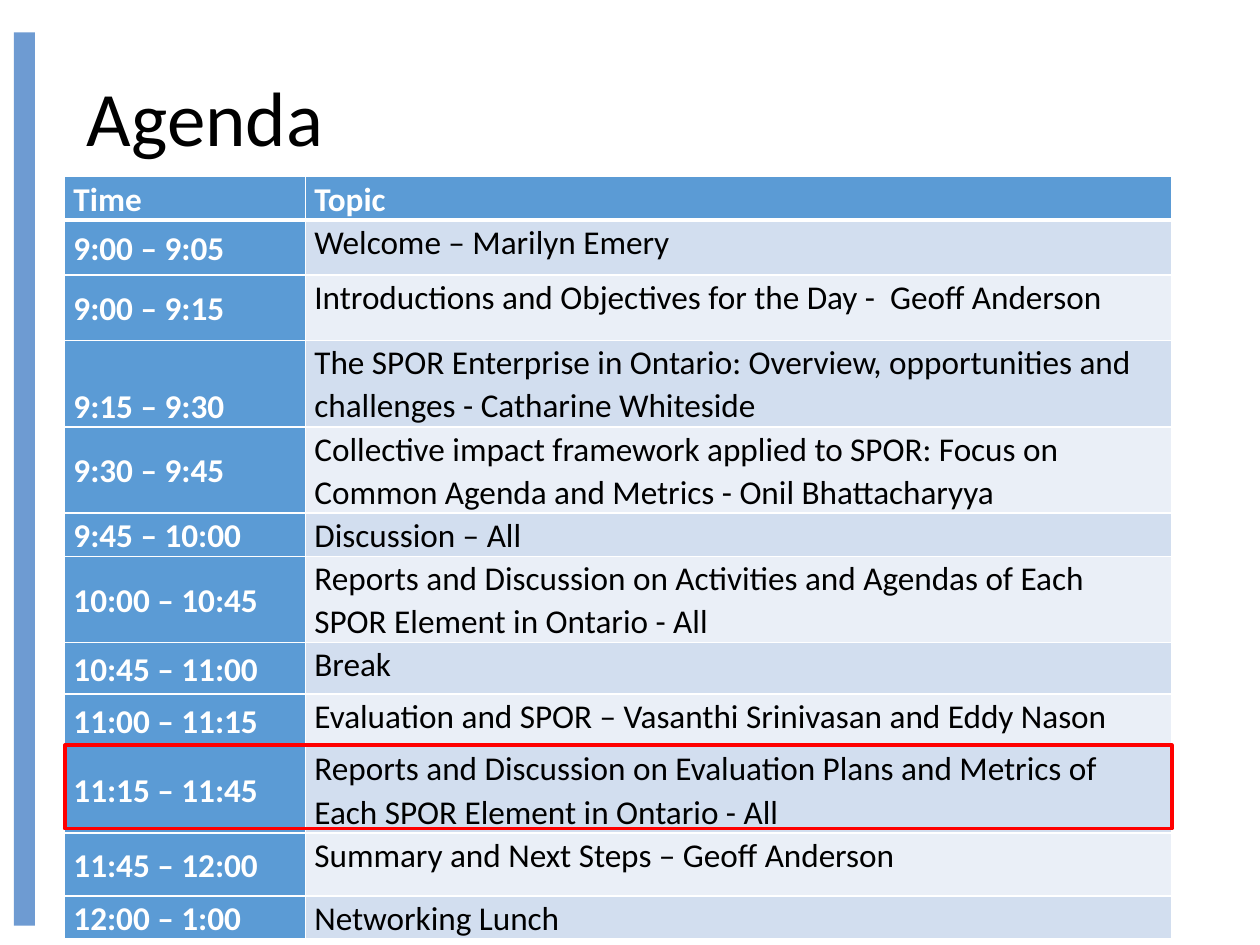
import pptx
import pptx.dml.color
import pptx.enum.shapes
import pptx.enum.text
import pptx.oxml
import pptx.oxml.ns
import pptx.util

Pt = pptx.util.Pt
ANCHOR = pptx.enum.text.MSO_ANCHOR
RECTANGLE = pptx.enum.shapes.MSO_SHAPE.RECTANGLE

FONT = "Calibri"
BLUE = "5B9BD5"
WHITE = "FFFFFF"
BLACK = "000000"
BANDS = ["D2DEEF", "EAEFF7"]
COLUMN_WIDTHS = [137.7, 494.9]

AGENDA = [
    (31.5, "9:00 – 9:05", "Welcome – Marilyn Emery"),
    (37.5, "9:00 – 9:15", "Introductions and Objectives for the Day -  Geoff Anderson"),
    (47.5, "9:15 – 9:30", "The SPOR Enterprise in Ontario: Overview, opportunities and challenges - Catharine Whiteside"),
    (47.5, "9:30 – 9:45", "Collective impact framework applied to SPOR: Focus on Common Agenda and Metrics - Onil Bhattacharyya"),
    (24, "9:45 – 10:00", "Discussion – All"),
    (47.5, "10:00 – 10:45", "Reports and Discussion on Activities and Agendas of Each SPOR Element in Ontario - All"),
    (29.5, "10:45 – 11:00", "Break"),
    (30, "11:00 – 11:15", "Evaluation and SPOR – Vasanthi Srinivasan and Eddy Nason"),
    (47.5, "11:15 – 11:45", "Reports and Discussion on Evaluation Plans and Metrics of Each SPOR Element in Ontario - All"),
    (36, "11:45 – 12:00", "Summary and Next Steps – Geoff Anderson"),
    (24, "12:00 – 1:00", "Networking Lunch"),
]
TIME_ANCHORS = {"9:15 – 9:30": ANCHOR.BOTTOM, "9:45 – 10:00": ANCHOR.TOP}


def color(value):
    return pptx.dml.color.RGBColor.from_string(value)


def write_text(frame, text, size=19, fill=BLACK, bold=False, spacing=1.07):
    frame.word_wrap = True
    paragraph = frame.paragraphs[0]
    paragraph.alignment = pptx.enum.text.PP_ALIGN.LEFT
    paragraph.line_spacing = spacing
    run = paragraph.add_run()
    run.text = text
    run.font.name = FONT
    run.font.size = Pt(size)
    run.font.bold = bold
    run.font.color.rgb = color(fill)


def add_rectangle(slide, left, top, width, height, fill=None, line=None, weight=2.25):
    shape = slide.shapes.add_shape(RECTANGLE, Pt(left), Pt(top), Pt(width), Pt(height))
    shape.shadow.inherit = False
    if fill:
        shape.fill.solid()
        shape.fill.fore_color.rgb = color(fill)
    else:
        shape.fill.background()
    if line:
        shape.line.color.rgb = color(line)
        shape.line.width = Pt(weight)
    else:
        shape.line.fill.background()


def place_title(slide, left, top, width, height):
    title = slide.shapes.title
    title.left, title.top, title.width, title.height = map(Pt, (left, top, width, height))
    title.text_frame.vertical_anchor = ANCHOR.MIDDLE
    write_text(title.text_frame, "Agenda", size=44, spacing=0.9)


def set_borders(cell, top=1, bottom=1):
    properties = cell._tc.get_or_add_tcPr()
    for side, weight in (("L", 1), ("R", 1), ("T", top), ("B", bottom)):
        properties.append(pptx.oxml.parse_xml(
            f'<a:ln{side} {pptx.oxml.ns.nsdecls("a")} w="{Pt(weight)}"><a:solidFill>'
            f'<a:srgbClr val="{WHITE}"/></a:solidFill></a:ln{side}>'))


def fill_cell(cell, text, background, anchor=ANCHOR.TOP, top=1, bottom=1, **text_format):
    cell.margin_left = cell.margin_right = Pt(5)
    cell.margin_top = cell.margin_bottom = 0
    cell.vertical_anchor = anchor
    set_borders(cell, top, bottom)
    cell.fill.solid()
    cell.fill.fore_color.rgb = color(background)
    write_text(cell.text_frame, text, **text_format)


def add_agenda_table(slide, left, top, width, height):
    table = slide.shapes.add_table(
        len(AGENDA) + 1, 2, Pt(left), Pt(top), Pt(width), Pt(height)).table
    table.horz_banding = False
    for column, column_width in zip(table.columns, COLUMN_WIDTHS):
        column.width = Pt(column_width)
    table.rows[0].height = Pt(24)
    for index, heading in enumerate(("Time", "Topic")):
        fill_cell(table.cell(0, index), heading, BLUE, bottom=3, fill=WHITE, bold=True)
    for index, (row_height, time, topic) in enumerate(AGENDA, 1):
        table.rows[index].height = Pt(row_height)
        top_border = 3 if index == 1 else 1
        fill_cell(table.cell(index, 0), time, BLUE, top=top_border, fill=WHITE, bold=True,
                  anchor=TIME_ANCHORS.get(time, ANCHOR.MIDDLE))
        fill_cell(table.cell(index, 1), topic, BANDS[(index - 1) % 2], top=top_border)


def build_agenda_slide(presentation):
    slide = presentation.slides.add_slide(presentation.slide_layouts[5])
    table_left, table_width = 37, sum(COLUMN_WIDTHS)
    add_rectangle(slide, 8, 18.5, 12, 510.5, fill="6E9BD2")
    place_title(slide, 42.5, 11.5, 620.5, 116)
    add_agenda_table(slide, table_left, 101, table_width, 432)
    add_rectangle(slide, table_left, 426, table_width, 47.5, line="FF0000")


def main():
    presentation = pptx.Presentation()
    presentation.slide_width = Pt(720)
    presentation.slide_height = Pt(540)
    build_agenda_slide(presentation)
    presentation.save("out.pptx")


if __name__ == "__main__":
    main()
